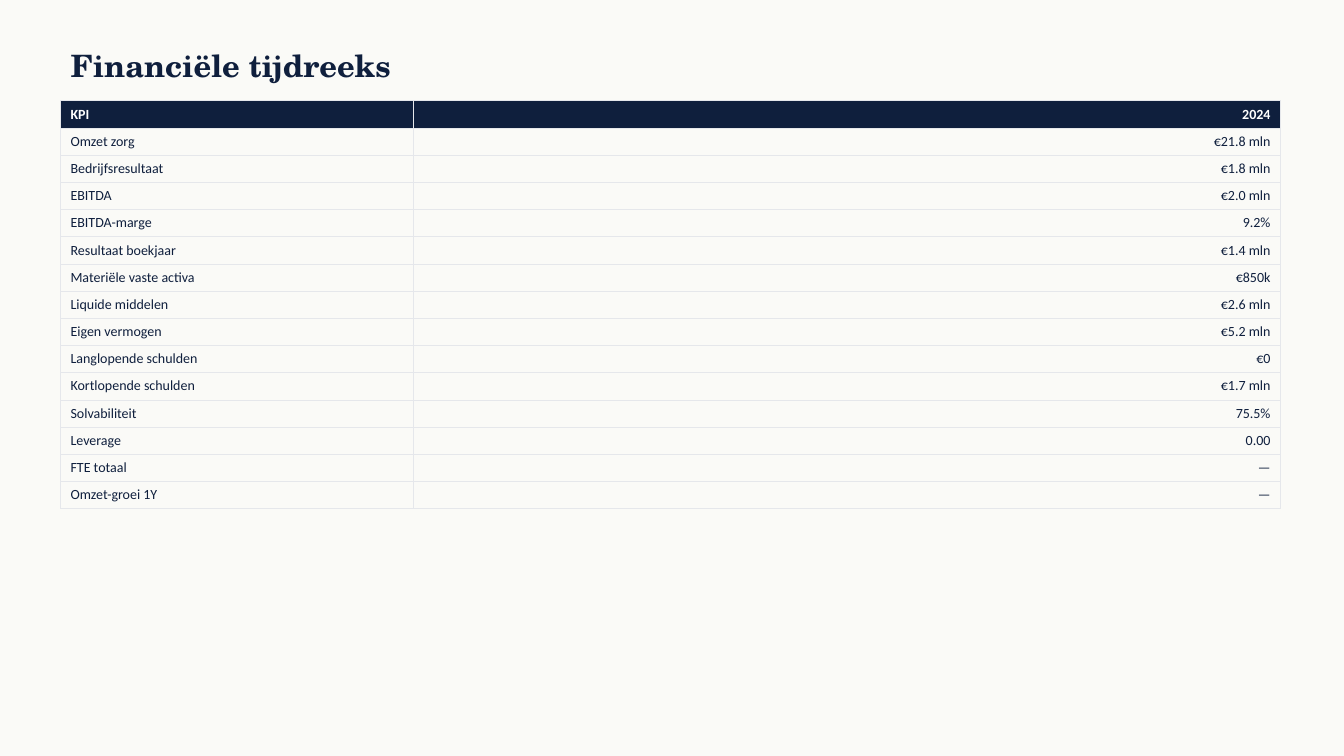
import pptx
import pptx.util
import pptx.dml.color
import pptx.enum.text
import pptx.oxml
import pptx.oxml.ns

TITLE = "Financiële tijdreeks"
ROWS = [
    ("KPI", "2024"),
    ("Omzet zorg", "€21.8 mln"),
    ("Bedrijfsresultaat", "€1.8 mln"),
    ("EBITDA", "€2.0 mln"),
    ("EBITDA-marge", "9.2%"),
    ("Resultaat boekjaar", "€1.4 mln"),
    ("Materiële vaste activa", "€850k"),
    ("Liquide middelen", "€2.6 mln"),
    ("Eigen vermogen", "€5.2 mln"),
    ("Langlopende schulden", "€0"),
    ("Kortlopende schulden", "€1.7 mln"),
    ("Solvabiliteit", "75.5%"),
    ("Leverage", "0.00"),
    ("FTE totaal", "—"),
    ("Omzet-groei 1Y", "—"),
]
COLORS = {"paper": "FAFAF7", "navy": "0F1F3D", "white": "FFFFFF", "rule": "E5E7EB"}
FONTS = {
    "title": {"name": "TeX Gyre Schola", "size": pptx.util.Pt(22), "bold": True},
    "head": {"name": "Calibri", "size": pptx.util.Pt(10), "bold": True},
    "body": {"name": "Calibri", "size": pptx.util.Pt(10), "bold": False},
}
SCALE = 9144  # EMU in one px, at 100 px to the inch
SIZE = (1333, 750)
TITLE_BOX = (60, 40, 1200, 50)
TABLE_AT = (60, 100)
COLS = (350, 860)
ROW_H = 27
ALIGN = pptx.enum.text.PP_ALIGN


def emu(px):
    return pptx.util.Emu(px * SCALE)


def rgb(name):
    return pptx.dml.color.RGBColor.from_string(COLORS[name])


def style(para, kind, color, align):
    para.alignment = align
    font = para.runs[0].font
    for key, value in FONTS[kind].items():
        setattr(font, key, value)
    font.color.rgb = rgb(color)


def border(cell):
    """Draw a thin rule on all four sides; call before setting the fill."""
    props = cell._tc.get_or_add_tcPr()
    for side in "LRTB":
        props.append(pptx.oxml.parse_xml(
            f'<a:ln{side} {pptx.oxml.ns.nsdecls("a")} w="6350"><a:solidFill>'
            f'<a:srgbClr val="{COLORS["rule"]}"/></a:solidFill></a:ln{side}>'))


def add_title(slide):
    title = slide.shapes.title
    for key, px in zip(("left", "top", "width", "height"), TITLE_BOX):
        setattr(title, key, emu(px))
    frame = title.text_frame
    frame.text = TITLE
    frame.auto_size = pptx.enum.text.MSO_AUTO_SIZE.NONE
    frame.vertical_anchor = pptx.enum.text.MSO_ANCHOR.MIDDLE
    style(frame.paragraphs[0], "title", "navy", ALIGN.LEFT)


def add_grid(slide):
    box = (*TABLE_AT, sum(COLS), ROW_H * len(ROWS))
    table = slide.shapes.add_table(len(ROWS), len(COLS), *map(emu, box)).table
    table.horz_banding = False
    table.first_row = False
    for col, width in zip(table.columns, COLS):
        col.width = emu(width)
    for r, row in enumerate(ROWS):
        kind, color = ("body", "navy") if r else ("head", "white")
        for c, text in enumerate(row):
            cell = table.cell(r, c)
            cell.text = text
            style(cell.text_frame.paragraphs[0], kind, color,
                  ALIGN.RIGHT if c else ALIGN.LEFT)
            border(cell)
            if r:
                cell.fill.background()
            else:
                cell.fill.solid()
                cell.fill.fore_color.rgb = rgb("navy")


def main():
    deck = pptx.Presentation()
    deck.slide_width, deck.slide_height = map(emu, SIZE)
    slide = deck.slides.add_slide(deck.slide_layouts[5])
    slide.background.fill.solid()
    slide.background.fill.fore_color.rgb = rgb("paper")
    add_title(slide)
    add_grid(slide)
    deck.save("out.pptx")


if __name__ == "__main__":
    main()
